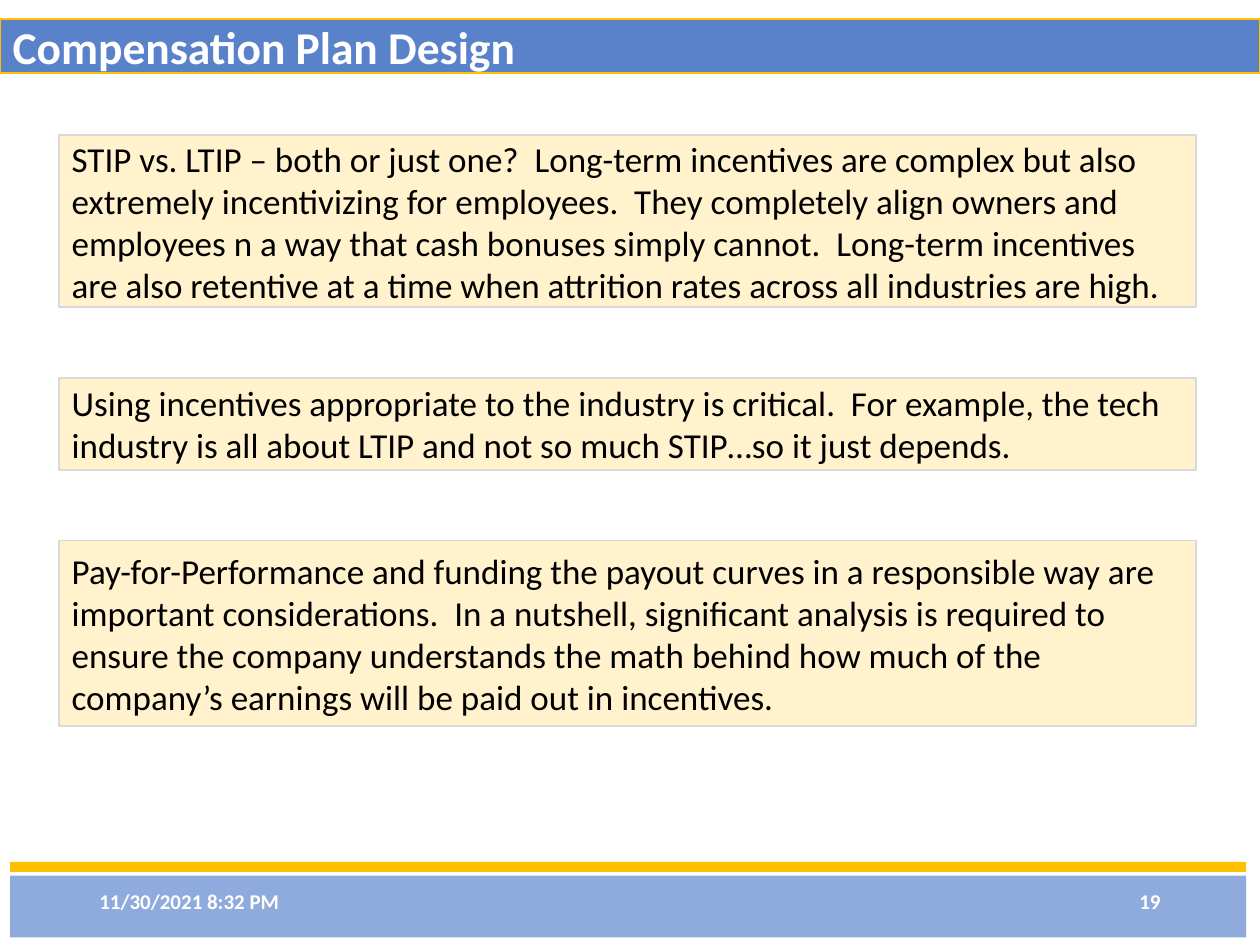
from dataclasses import dataclass

import pptx
import pptx.dml.color
import pptx.enum.shapes
import pptx.enum.text
import pptx.util

COLORS = {
    "title": "5982CB",
    "footer": "8FAADC",
    "gold": "FFC000",
    "cream": "FFF2CC",
    "border": "D9D9D9",
    "white": "FFFFFF",
    "black": "000000",
}
FONT = "Calibri"
COLUMNS, ROWS = 100, 75
SLIDE_WIDTH, SLIDE_HEIGHT = pptx.util.Inches(10), pptx.util.Inches(7.5)
ALIGN = pptx.enum.text.PP_ALIGN


@dataclass(frozen=True)
class Area:
    left: float
    top: float
    width: float
    height: float

    def emu(self) -> tuple[int, int, int, int]:
        column, row = SLIDE_WIDTH / COLUMNS, SLIDE_HEIGHT / ROWS
        return (round(self.left * column), round(self.top * row),
                round(self.width * column), round(self.height * row))


@dataclass(frozen=True)
class Point:
    text: str
    height: float


POINTS = [
    Point("STIP vs. LTIP – both or just one?  Long-term incentives are complex but also "
          "extremely incentivizing for employees.  They completely align owners and "
          "employees n a way that cash bonuses simply cannot.  Long-term incentives "
          "are also retentive at a time when attrition rates across all industries are high.",
          13.7),
    Point("Using incentives appropriate to the industry is critical.  For example, the tech "
          "industry is all about LTIP and not so much STIP…so it just depends.", 7.3),
    Point("Pay-for-Performance and funding the payout curves in a responsible way are "
          "important considerations.  In a nutshell, significant analysis is required to "
          "ensure the company understands the math behind how much of the "
          "company’s earnings will be paid out in incentives.", 14.7),
]
POINT_LEFT, POINT_TOP, POINT_WIDTH, POINT_GAP = 4.7, 10.7, 90.2, 5.6
FOOTER_BARS = [("footer", Area(0.8, 69.5, 98.1, 4.9)), ("gold", Area(0.8, 68.4, 98.1, 0.8))]
FOOTER_NOTES = [
    ("11/30/2021 8:32 PM", Area(6.9, 69.5, 22.5, 4), ALIGN.LEFT),
    ("19", Area(70.6, 69.5, 22.5, 4), ALIGN.RIGHT),
]


def rgb(name: str) -> pptx.dml.color.RGBColor:
    return pptx.dml.color.RGBColor.from_string(COLORS[name])


def paint(shape, fill: str, line: str | None = None, weight: float = 1) -> None:
    shape.fill.solid()
    shape.fill.fore_color.rgb = rgb(fill)
    if line:
        shape.line.color.rgb = rgb(line)
        shape.line.width = pptx.util.Pt(weight)
    else:
        shape.line.fill.background()


def write(shape, text: str, *, size: float, color: str, bold: bool = False,
          align: ALIGN = ALIGN.LEFT) -> None:
    frame = shape.text_frame
    frame.text = text
    frame.word_wrap = True
    frame.auto_size = pptx.enum.text.MSO_AUTO_SIZE.NONE
    frame.vertical_anchor = pptx.enum.text.MSO_ANCHOR.MIDDLE
    paragraph = frame.paragraphs[0]
    paragraph.alignment = align
    font = paragraph.runs[0].font
    font.name, font.size, font.bold = FONT, pptx.util.Pt(size), bold
    font.color.rgb = rgb(color)


def add_bar(slide, area: Area, fill: str, line: str | None = None):
    bar = slide.shapes.add_shape(pptx.enum.shapes.MSO_SHAPE.RECTANGLE, *area.emu())
    bar.shadow.inherit = False
    paint(bar, fill, line)
    return bar


def add_title(slide, text: str, area: Area) -> None:
    title = slide.shapes.title
    title.left, title.top, title.width, title.height = area.emu()
    paint(title, "title", "gold", 1.5)
    write(title, text, size=26, color="white", bold=True)


def add_points(slide, points: list[Point]) -> None:
    top = POINT_TOP
    for point in points:
        box = add_bar(slide, Area(POINT_LEFT, top, POINT_WIDTH, point.height), "cream", "border")
        write(box, point.text, size=20, color="black")
        top += point.height + POINT_GAP


def main() -> None:
    """Build the compensation plan design slide."""
    deck = pptx.Presentation()
    deck.slide_width, deck.slide_height = SLIDE_WIDTH, SLIDE_HEIGHT
    slide = deck.slides.add_slide(deck.slide_layouts[5])
    add_title(slide, "Compensation Plan Design", Area(0, 1.5, COLUMNS, 4.3))
    for fill, area in FOOTER_BARS:
        add_bar(slide, area, fill)
    for text, area, align in FOOTER_NOTES:
        note = slide.shapes.add_textbox(*area.emu())
        write(note, text, size=12, color="white", bold=True, align=align)
    add_points(slide, POINTS)
    deck.save("out.pptx")


if __name__ == "__main__":
    main()
